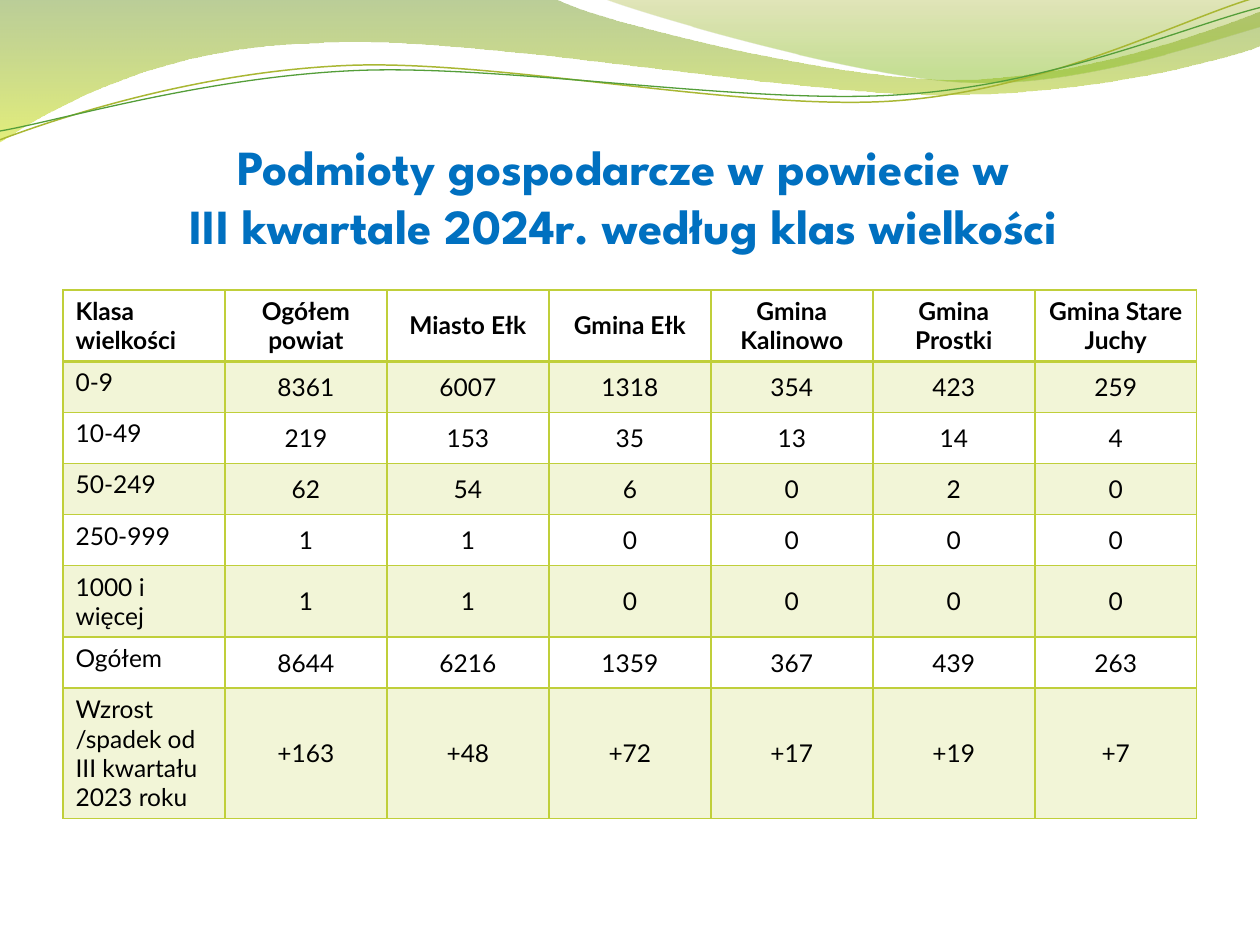
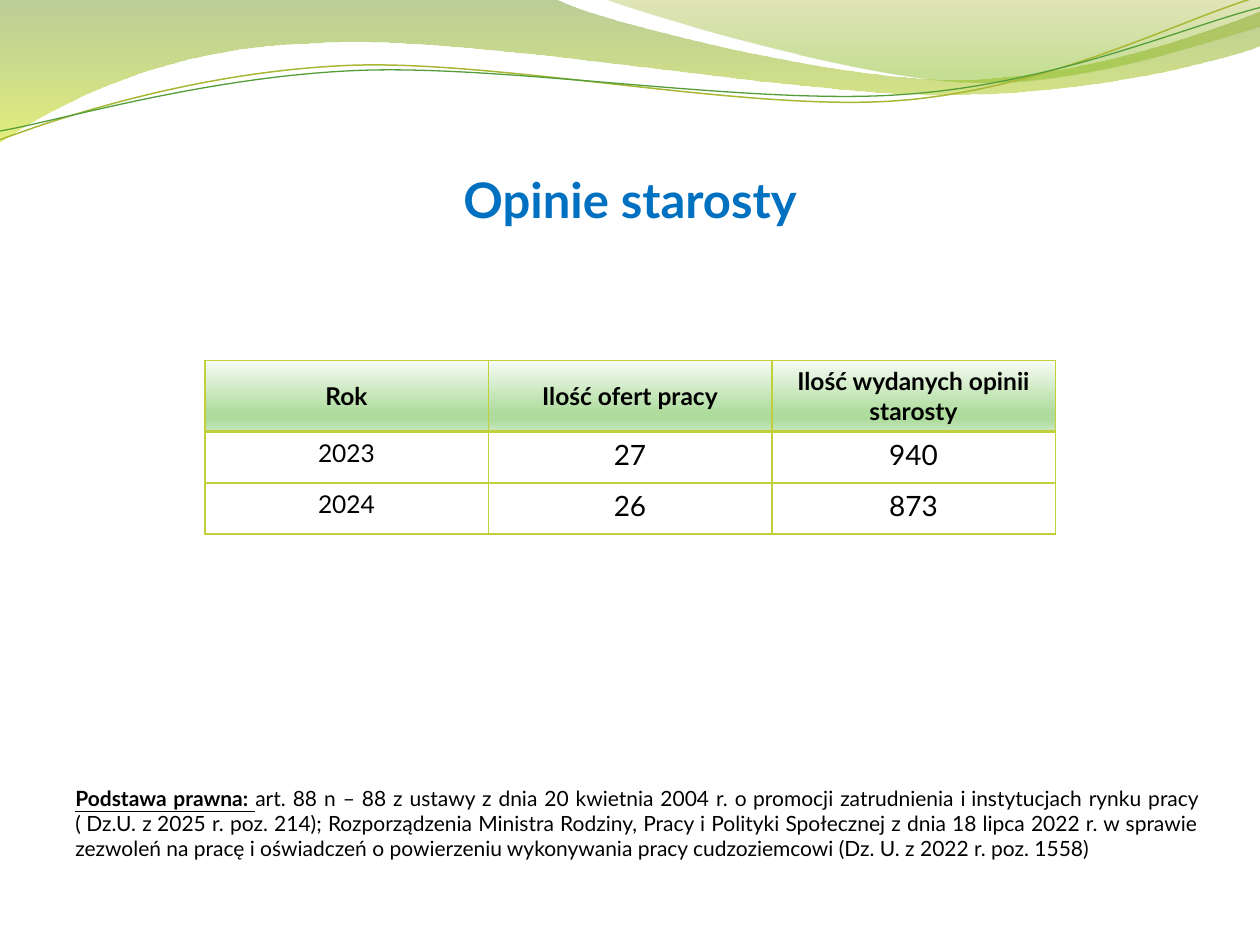
from collections import namedtuple

from lxml import etree
from pptx import Presentation
from pptx.dml.color import RGBColor
from pptx.enum.text import MSO_ANCHOR, MSO_AUTO_SIZE, PP_ALIGN
from pptx.oxml.ns import qn
from pptx.util import Pt

Box = namedtuple("Box", "left top width height")
Stop = namedtuple("Stop", "position colour alpha", defaults=(100,))

BLACK = RGBColor(0x00, 0x00, 0x00)
TITLE_BLUE = RGBColor(0x00, 0x70, 0xC0)
LIME = RGBColor(0xC0, 0xCF, 0x3A)
OLIVE_LINE = RGBColor(0xA9, 0xB7, 0x33)
GREEN_LINE = RGBColor(0x54, 0x9E, 0x39)
MOSS = RGBColor(0x69, 0x92, 0x1C)
YELLOW_GREEN = RGBColor(0xCC, 0xE1, 0x0F)
OLIVE = RGBColor(0x9B, 0xAA, 0x1A)
LEAF = RGBColor(0x81, 0xBA, 0x16)
MINT_PALE = RGBColor(0xF6, 0xFB, 0xF4)
MINT = RGBColor(0xAE, 0xDC, 0x9D)
MINT_SOFT = RGBColor(0xC9, 0xE8, 0xBE)

BODY_FONT = "Lato"
HEADING_FONT = "League Spartan"
NO_BREAK = chr(160)

BAND_FILL = [Stop(0, LIME, 20)]
HEADER_FILL = [Stop(0, MINT_PALE), Stop(74, MINT), Stop(83, MINT), Stop(100, MINT_SOFT)]

WAVE_BOX = Box(0, 0, 720, 82)
ROW_HEIGHT = 29.2
TWO_LINES = 40.6
FOUR_LINES = 74.5

# Waves: points in inches from the corner of the band; six numbers make a curve, two a line.
BROAD_WAVE = [
    (0, 0), (4.4, -0.01), (4.75, 0.17, 6.63, 0.63, 7.58, 0.63), (8.53, 0.63, 9.58, 0.26, 10, 0.09),
    (10.01, 0.36), (9.83, 0.44, 8.69, 0.76, 7.46, 0.75), (6.22, 0.75, 3.81, 0.28, 2.57, 0.34),
    (1.29, 0.36, 0.46, 0.83, -0.01, 1.13), (0, 0),
]
RIGHT_WAVE = [
    (4.79, -0.01), (5.09, 0.11, 6.82, 0.62, 7.68, 0.65), (8.55, 0.69, 9.61, 0.32, 10, 0.21),
    (10, 0), (4.79, -0.01),
]
OLIVE_CURVE = [
    (0, 1.11), (0.48, 0.93, 1.57, 0.57, 2.76, 0.52), (3.95, 0.47, 5.92, 0.89, 7.12, 0.8),
    (8.33, 0.71, 9.38, 0.15, 9.97, -0.02),
]
GREEN_CURVE = [
    (0, 1.04), (0.47, 0.96, 1.63, 0.61, 2.83, 0.56), (4.02, 0.51, 5.97, 0.84, 7.17, 0.75),
    (8.36, 0.67, 9.41, 0.21, 10, 0.06),
]

COMPANIES = [
    ("Klasa wielkości", "Ogółem powiat", "Miasto Ełk", "Gmina Ełk", "Gmina Kalinowo",
     "Gmina Prostki", "Gmina Stare Juchy"),
    ("0-9", "8361", "6007", "1318", "354", "423", "259"),
    ("10-49", "219", "153", "35", "13", "14", "4"),
    ("50-249", "62", "54", "6", "0", "2", "0"),
    ("250-999", "1", "1", "0", "0", "0", "0"),
    ("1000 i więcej", "1", "1", "0", "0", "0", "0"),
    ("Ogółem", "8644", "6216", "1359", "367", "439", "263"),
    ("Wzrost /spadek od III kwartału 2023 roku", "+163", "+48", "+72", "+17", "+19", "+7"),
]
OPINIONS = [
    ("Rok", "Ilość ofert pracy", "Ilość wydanych opinii starosty"),
    ("2023", "27", "940"),
    ("2024", "26", "873"),
]
LEGAL_BASIS = (
    f"art. 88 n – 88 z ustawy z dnia 20 kwietnia 2004 r. o{NO_BREAK}promocji zatrudnienia "
    f"i{NO_BREAK}instytucjach rynku pracy ({NO_BREAK}Dz.U. z{NO_BREAK}2025 r. poz. 214); "
    "Rozporządzenia Ministra Rodziny, Pracy i Polityki Społecznej z dnia 18 lipca 2022 r. "
    "w sprawie zezwoleń na pracę i oświadczeń o powierzeniu wykonywania pracy cudzoziemcowi "
    "(Dz. U. z 2022 r. poz. 1558)"
)


def add_text(para, text, size=14, font=BODY_FONT, colour=BLACK, bold=False,
             underline=False, align=PP_ALIGN.LEFT):
    para.alignment = align
    for number, line in enumerate(text.split("\n")):
        if number:
            para.add_line_break()
        span = para.add_run()
        span.text = line
        span.font.size = Pt(size)
        span.font.name = font
        span.font.color.rgb = colour
        span.font.bold = bold
        span.font.underline = underline


def add_colour(parent, colour, alpha=100):
    node = etree.SubElement(parent, qn("a:srgbClr"), val=str(colour))
    if alpha < 100:
        etree.SubElement(node, qn("a:alpha"), val=str(alpha * 1000))


def paint(fill, properties, stops):
    """Fill with nothing, one translucent colour, or a gradient from top to bottom."""
    fill.background()
    if not stops:
        return
    blank = properties.find(qn("a:noFill"))
    if len(stops) == 1:
        node = etree.Element(qn("a:solidFill"))
        add_colour(node, stops[0].colour, stops[0].alpha)
    else:
        node = etree.Element(qn("a:gradFill"), rotWithShape="1")
        stop_list = etree.SubElement(node, qn("a:gsLst"))
        for stop in stops:
            entry = etree.SubElement(stop_list, qn("a:gs"), pos=str(stop.position * 1000))
            add_colour(entry, stop.colour, stop.alpha)
        etree.SubElement(node, qn("a:lin"), ang="5400000", scaled="0")
    properties.replace(blank, node)


def bend(wave, outline):
    """Turn each three line segments that stand for a curve into one cubic curve."""
    segments = iter(list(wave.element.spPr.iter(qn("a:lnTo"))))
    for piece in outline[1:]:
        segment = next(segments)
        if len(piece) == 2:
            continue
        curve = etree.Element(qn("a:cubicBezTo"))
        segment.addprevious(curve)
        for part in (segment, next(segments), next(segments)):
            curve.append(part[0])
            part.getparent().remove(part)


def add_wave(page, box, outline, stops=None, colour=None, width=0):
    points = [
        (Pt(box.left + x * 72), Pt(box.top + y * 72))
        for piece in outline for x, y in zip(piece[::2], piece[1::2])
    ]
    builder = page.shapes.build_freeform(*points[0])
    builder.add_line_segments(points[1:], close=bool(stops))
    wave = builder.convert_to_shape()
    bend(wave, outline)
    wave.shadow.inherit = False
    paint(wave.fill, wave.element.spPr, stops)
    if colour is None:
        wave.line.fill.background()
    else:
        wave.line.color.rgb = colour
        wave.line.width = Pt(width)


def add_wave_band(page, box):
    add_wave(page, box, BROAD_WAVE, [Stop(0, MOSS, 45), Stop(100, YELLOW_GREEN, 55)])
    add_wave(page, box, RIGHT_WAVE, [Stop(0, OLIVE, 30), Stop(80, LEAF, 45)])
    add_wave(page, box, OLIVE_CURVE, colour=OLIVE_LINE, width=0.85)
    add_wave(page, box, GREEN_CURVE, colour=GREEN_LINE, width=0.75)


def add_frame(page, box):
    frame = page.shapes.add_textbox(*map(Pt, box)).text_frame
    frame.word_wrap = True
    return frame


def add_title(page, box, text, font=BODY_FONT):
    frame = add_frame(page, box)
    frame.margin_left = frame.margin_right = frame.margin_bottom = 0
    frame.vertical_anchor = MSO_ANCHOR.BOTTOM
    add_text(frame.paragraphs[0], text, size=28, font=font, colour=TITLE_BLUE,
             bold=True, align=PP_ALIGN.CENTER)


def add_borders(cell, row):
    """Draw thin lime borders, with a thick one between header and body."""
    thick_side = {0: "lnB", 1: "lnT"}.get(row)
    properties = cell._tc.get_or_add_tcPr()
    for side in ("lnL", "lnR", "lnT", "lnB"):
        width = 2 if side == thick_side else 1
        line = etree.SubElement(properties, qn(f"a:{side}"), w=str(Pt(width)))
        add_colour(etree.SubElement(line, qn("a:solidFill")), LIME)


def add_grid(page, box, rows, heights, style_cell):
    """Add a table; style_cell(cell, row, column) returns its fill stops and text format."""
    columns = len(rows[0])
    table = page.shapes.add_table(len(rows), columns, *map(Pt, box)).table
    table.first_row = table.horz_banding = False
    for column in table.columns:
        column.width = Pt(box.width / columns)
    for row, texts in enumerate(rows):
        table.rows[row].height = Pt(heights[row])
        for column, text in enumerate(texts):
            cell = table.cell(row, column)
            stops, text_format = style_cell(cell, row, column)
            add_borders(cell, row)
            paint(cell.fill, cell._tc.get_or_add_tcPr(), stops)
            add_text(cell.text_frame.paragraphs[0], text, bold=row == 0, **text_format)


def style_company_cell(cell, row, column):
    is_label = column == 0
    cell.vertical_anchor = MSO_ANCHOR.TOP if is_label else MSO_ANCHOR.MIDDLE
    align = PP_ALIGN.LEFT if is_label else PP_ALIGN.CENTER
    return BAND_FILL if row % 2 else None, {"align": align}


def style_opinion_cell(cell, row, column):
    is_value = row > 0 and column > 0
    cell.vertical_anchor = MSO_ANCHOR.TOP if row else MSO_ANCHOR.MIDDLE
    if is_value:
        cell.margin_left = cell.margin_right = Pt(5)
    return None if row else HEADER_FILL, {"align": PP_ALIGN.CENTER, "size": 16 if is_value else 14}


def add_legal_note(page, box):
    frame = add_frame(page, box)
    frame.auto_size = MSO_AUTO_SIZE.SHAPE_TO_FIT_TEXT
    para = frame.paragraphs[0]
    add_text(para, "Podstawa prawna: ", size=12, bold=True, underline=True)
    add_text(para, LEGAL_BASIS, size=12, align=PP_ALIGN.JUSTIFY)


def add_page(deck):
    page = deck.slides.add_slide(deck.slide_layouts[6])
    add_wave_band(page, WAVE_BOX)
    return page


def build_companies_page(deck):
    page = add_page(deck)
    add_title(page, Box(36, 55.4, 648, 90),
              "Podmioty gospodarcze w powiecie w \nIII kwartale 2024r. według klas wielkości ",
              font=HEADING_FONT)
    heights = [TWO_LINES, *[ROW_HEIGHT] * 4, TWO_LINES, ROW_HEIGHT, FOUR_LINES]
    add_grid(page, Box(36, 165.6, 648, sum(heights)), COMPANIES, heights, style_company_cell)


def build_opinions_page(deck):
    page = add_page(deck)
    add_title(page, Box(36, 40.3, 648, 90), "Opinie starosty")
    heights = [TWO_LINES, ROW_HEIGHT, ROW_HEIGHT]
    add_grid(page, Box(117, 205.9, 486, sum(heights)), OPINIONS, heights, style_opinion_cell)
    add_legal_note(page, Box(36, 445.2, 656, 50.9))


def main():
    deck = Presentation()
    deck.slide_width, deck.slide_height = Pt(720), Pt(540)
    build_companies_page(deck)
    build_opinions_page(deck)
    deck.save("out.pptx")


if __name__ == "__main__":
    main()
